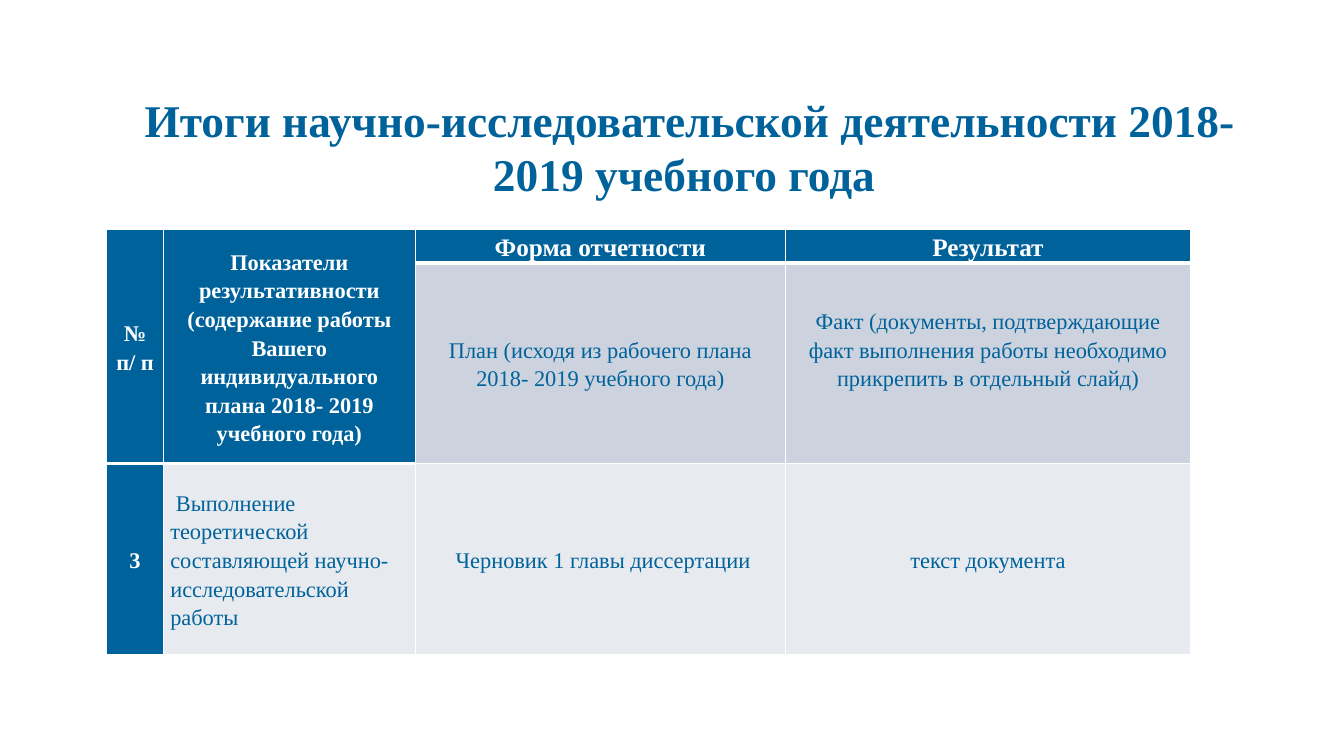
from lxml.etree import SubElement
from pptx import Presentation
from pptx.dml.color import RGBColor
from pptx.enum.text import MSO_ANCHOR as Anchor, PP_ALIGN as Align
from pptx.oxml.ns import qn
from pptx.util import Inches, Pt

FONT = "Times New Roman"
BLUE, WHITE, GREY, PALE = "00629B", "FFFFFF", "CCD3DE", "E7EAEF"
COLUMNS = [0.56, 2.5, 3.67, 4.02]
ROWS = [0.33, 1.97, 1.9]
HEADER_LINE, GRID_LINE = 3, 1

# Cell texts by row; None marks a cell covered by the one above it
CELLS = [
    ["№ п/ п",
     "Показатели результативности\n"
     "(содержание работы Вашего индивидуального плана 2018- 2019 учебного года)",
     "Форма отчетности", "Результат"],
    [None, None,
     "План (исходя из рабочего плана 2018- 2019 учебного года)",
     "Факт (документы, подтверждающие факт выполнения работы необходимо "
     "прикрепить в отдельный слайд)"],
    ["3", " Выполнение теоретической составляющей научно-исследовательской работы",
     " Черновик 1 главы диссертации", "текст документа"],
]


def color(code):
    return RGBColor.from_string(code)


def set_font(para, size, code, bold):
    font = para.font
    font.name, font.size, font.bold = FONT, Pt(size), bold
    font.color.rgb = color(code)


def set_borders(cell, bottom):
    props = cell._tc.get_or_add_tcPr()
    for side, width in (("lnL", GRID_LINE), ("lnR", GRID_LINE), ("lnB", bottom)):
        line = SubElement(props, qn(f"a:{side}"), w=str(Pt(width)))
        fill = SubElement(line, qn("a:solidFill"))
        SubElement(fill, qn("a:srgbClr"), val=WHITE)


def format_cell(cell, fill, bottom):
    set_borders(cell, bottom)
    cell.fill.solid()
    cell.fill.fore_color.rgb = color(fill)
    cell.margin_left = cell.margin_right = Inches(0.07)
    cell.margin_top = cell.margin_bottom = 0
    cell.vertical_anchor = Anchor.MIDDLE


def write_cell(cell, text, size, code, bold, align):
    cell.text = text
    for para in cell.text_frame.paragraphs:
        para.alignment = align
        para.line_spacing = 1.15
        set_font(para, size, code, bold)


def add_title(page, text):
    box = page.shapes.title
    box.left, box.top = Inches(0.84), Inches(1)
    box.width, box.height = Inches(12), Inches(0.9)
    box.text_frame.text = text
    box.text_frame.vertical_anchor = Anchor.MIDDLE
    para = box.text_frame.paragraphs[0]
    para.alignment = Align.CENTER
    set_font(para, 32.4, BLUE, True)


def add_results(page):
    frame = page.shapes.add_table(len(ROWS), len(COLUMNS), Inches(1.06), Inches(2.28),
                                  Inches(sum(COLUMNS)), Inches(sum(ROWS)))
    table = frame.table
    for column, width in zip(table.columns, COLUMNS):
        column.width = Inches(width)
    for row, height in zip(table.rows, ROWS):
        row.height = Inches(height)

    for r, texts in enumerate(CELLS):
        for c, text in enumerate(texts):
            cell = table.cell(r, c)
            header = r == 0 or c == 0 or text is None
            fill = BLUE if header else (GREY if r == 1 else PALE)
            thick = r == 0 or text is None
            format_cell(cell, fill, HEADER_LINE if thick else GRID_LINE)
            if text is not None:
                write_cell(cell, text, 18 if r == 0 and c > 1 else 16,
                           WHITE if header else BLUE, header,
                           Align.LEFT if (r, c) == (2, 1) else Align.CENTER)

    # The first two headings span both header rows
    for c in (0, 1):
        table.cell(0, c).merge(table.cell(1, c))
    for c in (2, 3):
        table.cell(0, c).vertical_anchor = Anchor.TOP
    # The note on documents sits half a line above the middle
    table.cell(1, 3).margin_bottom = Inches(0.29)


def main():
    deck = Presentation()
    deck.slide_width, deck.slide_height = Inches(13.33), Inches(7.5)
    page = deck.slides.add_slide(deck.slide_layouts[5])
    add_title(page, "Итоги научно-исследовательской деятельности 2018- 2019 учебного года ")
    add_results(page)
    deck.save("out.pptx")


if __name__ == "__main__":
    main()
